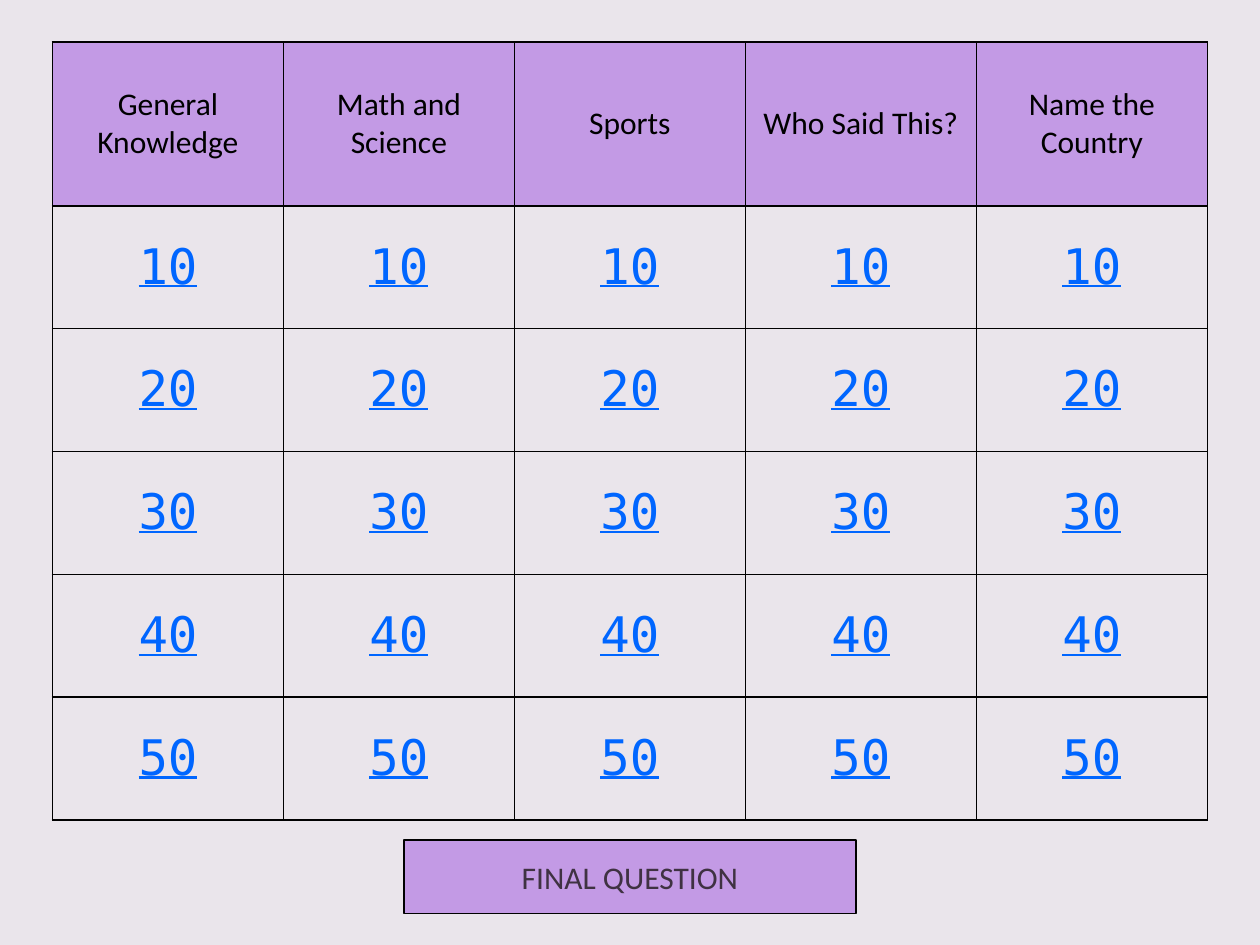
from lxml import etree
from pptx import Presentation
from pptx.dml.color import RGBColor
from pptx.enum.shapes import MSO_SHAPE
from pptx.enum.text import MSO_ANCHOR, PP_ALIGN
from pptx.oxml.ns import qn
from pptx.util import Emu, Pt

CENTER = PP_ALIGN.CENTER
MIDDLE = MSO_ANCHOR.MIDDLE
RECTANGLE = MSO_SHAPE.RECTANGLE

BACKGROUND = RGBColor(0xEA, 0xE5, 0xEB)
PURPLE = RGBColor(0xC3, 0x9A, 0xE5)
BLACK = RGBColor(0x00, 0x00, 0x00)
BLUE = RGBColor(0x00, 0x66, 0xFF)
DARK = RGBColor(0x3F, 0x32, 0x42)

EMU_PER_PX = 7620  # 120 px to the inch
SLIDE_WIDTH, SLIDE_HEIGHT = 1200, 900
BOARD_BOX = (50, 40, 1100, 741)
FINAL_BOX = (385, 800, 430, 70)
HEADER_HEIGHT = 156
LINE_WIDTH = Pt(1)

CATEGORIES = ["General Knowledge", "Math and Science", "Sports",
              "Who Said This?", "Name the Country"]
POINTS = [10, 20, 30, 40, 50]

HEADER_FONT = {"name": "Calibri", "size": Pt(18)}
POINTS_FONT = {"name": "DejaVu Sans Mono", "size": Pt(28), "underline": True}


def px(length):
    return Emu(round(length * EMU_PER_PX))


def write_centered(text_frame, text, font_format, color):
    paragraph = text_frame.paragraphs[0]
    paragraph.alignment = CENTER
    run = paragraph.add_run()
    run.text = text
    for name, value in font_format.items():
        setattr(run.font, name, value)
    run.font.color.rgb = color


def add_borders(cell):
    properties = cell._tc.get_or_add_tcPr()
    for side in ("a:lnL", "a:lnR", "a:lnT", "a:lnB"):
        line = etree.SubElement(properties, qn(side), w=str(LINE_WIDTH))
        fill = etree.SubElement(line, qn("a:solidFill"))
        etree.SubElement(fill, qn("a:srgbClr"), val=str(BLACK))


def add_board(slide, box):
    """Add the grid of categories with their point values below."""
    left, top, width, height = box
    table = slide.shapes.add_table(
        len(POINTS) + 1, len(CATEGORIES), *map(px, box)).table
    table.first_row = table.horz_banding = False
    for column in table.columns:
        column.width = px(width / len(CATEGORIES))
    for row in table.rows:
        row.height = px((height - HEADER_HEIGHT) / len(POINTS))
    table.rows[0].height = px(HEADER_HEIGHT)

    for column_index, category in enumerate(CATEGORIES):
        for row_index, value in enumerate([category, *POINTS]):
            cell = table.cell(row_index, column_index)
            cell.vertical_anchor = MIDDLE
            add_borders(cell)
            if row_index == 0:
                cell.fill.solid()
                cell.fill.fore_color.rgb = PURPLE
                write_centered(cell.text_frame, value, HEADER_FONT, BLACK)
            else:
                cell.fill.background()
                write_centered(cell.text_frame, str(value), POINTS_FONT, BLUE)


def add_final_button(slide, box):
    button = slide.shapes.add_shape(RECTANGLE, *map(px, box))
    button.shadow.inherit = False
    button.fill.solid()
    button.fill.fore_color.rgb = PURPLE
    button.line.color.rgb = BLACK
    button.line.width = LINE_WIDTH
    button.text_frame.vertical_anchor = MIDDLE
    write_centered(button.text_frame, "FINAL QUESTION", HEADER_FONT, DARK)


def main():
    presentation = Presentation()
    presentation.slide_width = px(SLIDE_WIDTH)
    presentation.slide_height = px(SLIDE_HEIGHT)
    slide = presentation.slides.add_slide(presentation.slide_layouts[6])
    slide.background.fill.solid()
    slide.background.fill.fore_color.rgb = BACKGROUND
    add_board(slide, BOARD_BOX)
    add_final_button(slide, FINAL_BOX)
    presentation.save("out.pptx")


if __name__ == "__main__":
    main()
